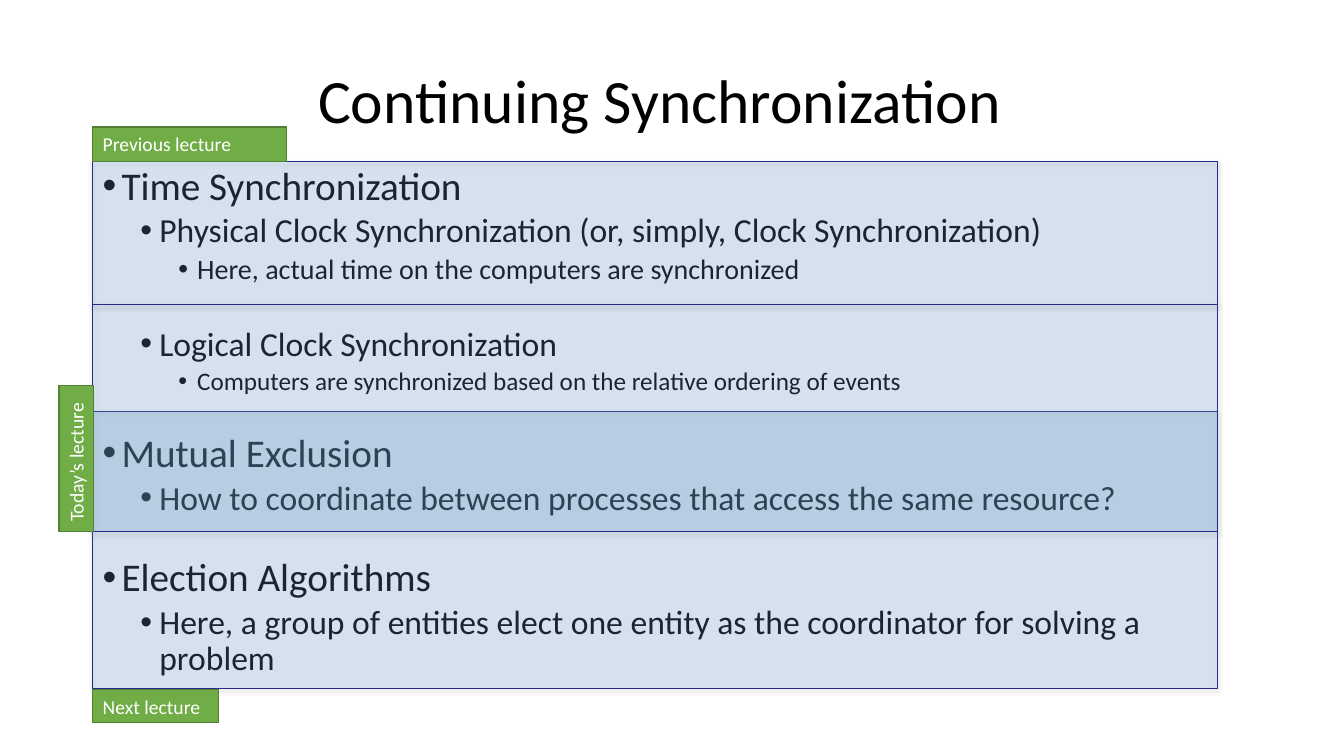
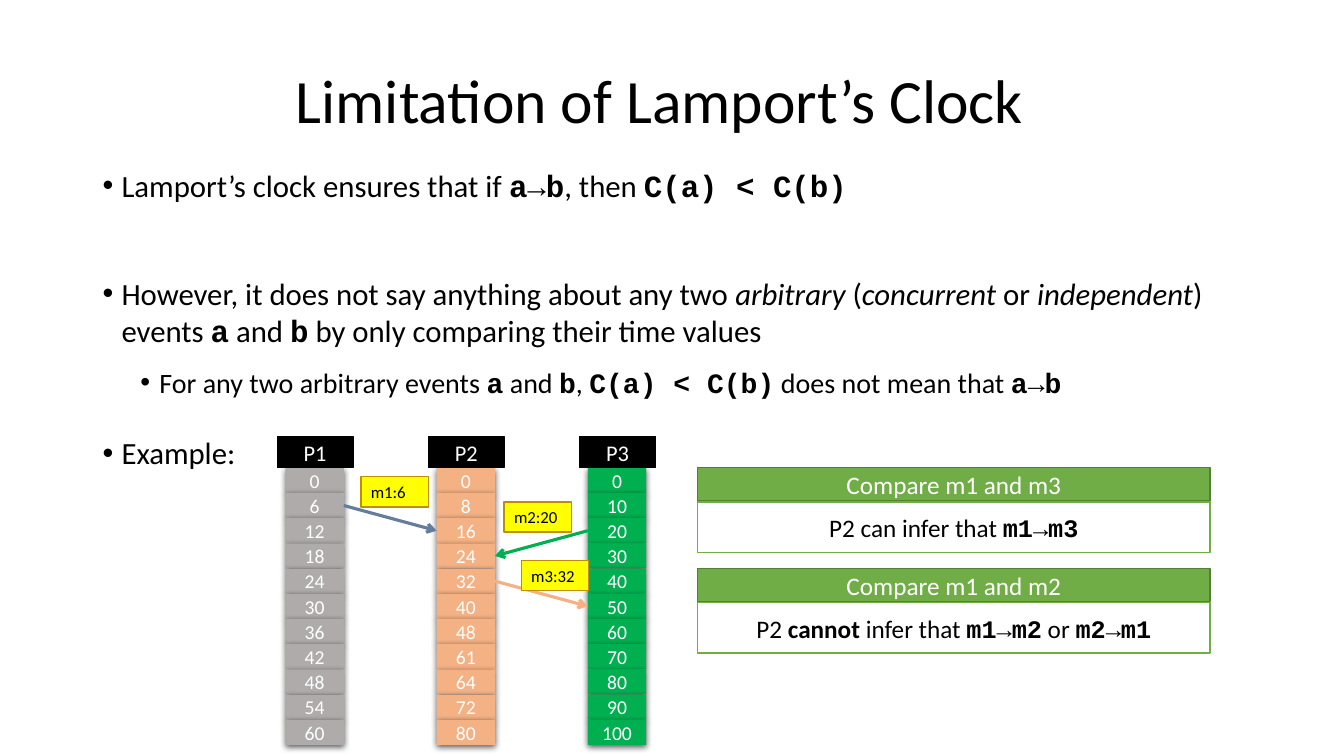
from dataclasses import dataclass

from lxml import etree
from pptx import Presentation
from pptx.dml.color import RGBColor
from pptx.enum.shapes import MSO_CONNECTOR, MSO_SHAPE
from pptx.enum.text import MSO_ANCHOR, MSO_AUTO_SIZE, PP_ALIGN
from pptx.oxml.ns import qn
from pptx.util import Inches, Pt

RECT = MSO_SHAPE.RECTANGLE
STRAIGHT = MSO_CONNECTOR.STRAIGHT
TOP, MIDDLE = MSO_ANCHOR.TOP, MSO_ANCHOR.MIDDLE
LEFT, CENTER = PP_ALIGN.LEFT, PP_ALIGN.CENTER
NO_AUTOFIT = MSO_AUTO_SIZE.NONE
TITLE_ONLY = 5


@dataclass(frozen=True)
class Theme:
    # Colours
    black: str = "000000"
    white: str = "FFFFFF"
    green: str = "70AD47"
    green_edge: str = "538035"
    band: str = "5B9BD5"
    band_edge: str = "292989"
    band_shadow: str = "808080"
    yellow: str = "FFFF00"
    yellow_edge: str = "BD8E00"
    gray: str = "AFABAB"
    orange: str = "F4B183"
    bright_green: str = "00B050"
    slate: str = "657D9D"
    # Fonts and type sizes
    font: str = "Calibri"
    code_font: str = "Courier New"
    title: int = 44
    topic: int = 28
    subtopic: int = 24
    detail: int = 20
    fine_detail: int = 18
    statement: int = 22
    card: int = 18
    process: int = 16
    label: int = 14
    message: int = 12


T = Theme()


# Text
def code(text):
    return text, {"font": T.code_font, "bold": True}


def bold(text):
    return text, {"bold": True}


def italic(text):
    return text, {"italic": True}


def add_run(paragraph, text, size, color, font=T.font, bold=False, italic=False):
    run = paragraph.add_run()
    run.text = text
    run.font.name, run.font.size = font, Pt(size)
    run.font.bold, run.font.italic = bold, italic
    run.font.color.rgb = RGBColor.from_string(color)


def write(paragraph, content, size, color=T.black, align=LEFT, level=0,
          bullet=False, line=1.0, before=0, after=0):
    """Fill a paragraph with a string, or a list of strings and styled parts."""
    paragraph.alignment, paragraph.level = align, level
    paragraph.line_spacing = line
    paragraph.space_before, paragraph.space_after = Pt(before), Pt(after)
    if bullet:
        step = Pt(13.5)
        properties = paragraph._p.get_or_add_pPr()
        properties.set("marL", str(step * (1 + 2 * level)))
        properties.set("indent", str(-step))
        etree.SubElement(properties, qn("a:buFont"), typeface="Arial")
        etree.SubElement(properties, qn("a:buChar"), char="•")
    for part in [content] if isinstance(content, str) else content:
        text, style = (part, {}) if isinstance(part, str) else part
        add_run(paragraph, text, size, color, **style)


def add_title_slide(prs, title):
    slide = prs.slides.add_slide(prs.slide_layouts[TITLE_ONLY])
    heading = slide.shapes.title
    heading.left, heading.top = Inches(1.92), Inches(0.3)
    heading.width, heading.height = Inches(9.25), Inches(1.45)
    frame = heading.text_frame
    frame.auto_size, frame.vertical_anchor = NO_AUTOFIT, MIDDLE
    write(frame.paragraphs[0], title, T.title, align=CENTER, line=0.9)
    return slide


def add_bullets(slide, width, height, items, line, after=0):
    """Each item is (level, size, space before, content)."""
    box = slide.shapes.add_textbox(Inches(0.92), Inches(1.6),
                                   Inches(width), Inches(height))
    frame = box.text_frame
    frame.word_wrap = True
    for index, (level, size, before, content) in enumerate(items):
        paragraph = frame.add_paragraph() if index else frame.paragraphs[0]
        write(paragraph, content, size, level=level, bullet=True,
              line=line, before=before, after=after)


# Shapes
def add_box(slide, left, top, width, height, fill, edge=None, edge_width=1,
            alpha=None, shadow=None):
    """A shadow is (colour, opacity percent, blur points, distance points)."""
    box = slide.shapes.add_shape(RECT, Inches(left), Inches(top),
                                 Inches(width), Inches(height))
    box.shadow.inherit = False
    box.fill.solid()
    box.fill.fore_color.rgb = RGBColor.from_string(fill)
    if edge:
        box.line.color.rgb = RGBColor.from_string(edge)
        box.line.width = Pt(edge_width)
    else:
        box.line.fill.background()
    properties = box.element.spPr
    if alpha:
        color = properties.find(qn("a:solidFill"))[0]
        etree.SubElement(color, qn("a:alpha"), val=str(alpha * 1000))
    if shadow:
        shade, opacity, blur, distance = shadow
        outer = etree.SubElement(
            properties.find(qn("a:effectLst")), qn("a:outerShdw"),
            blurRad=str(Pt(blur)), dist=str(Pt(distance)),
            dir="5400000", algn="t", rotWithShape="0")
        color = etree.SubElement(outer, qn("a:srgbClr"), val=shade)
        etree.SubElement(color, qn("a:alpha"), val=str(opacity * 1000))
    return box


def add_text_box(slide, place, content, size, color=T.white, align=CENTER,
                 anchor=MIDDLE, **look):
    box = add_box(slide, *place, **look)
    box.text_frame.word_wrap = True
    box.text_frame.vertical_anchor = anchor
    write(box.text_frame.paragraphs[0], content, size, color, align)
    return box


def add_band(slide, top, height):
    add_box(slide, 0.92, top, 11.16, height, T.band, T.band_edge, 0.75,
            alpha=20, shadow=(T.band_shadow, 38, 3.1, 1.6))


def add_lecture_tag(slide, place, text):
    return add_text_box(slide, place, text, T.label, align=LEFT, anchor=TOP,
                        fill=T.green, edge=T.green_edge)


def add_arrow(slide, start, end, color):
    arrow = slide.shapes.add_connector(STRAIGHT, *map(Inches, start + end))
    arrow.line.color.rgb = RGBColor.from_string(color)
    arrow.line.width = Pt(2.25)
    properties = arrow.element.spPr
    etree.SubElement(properties.find(qn("a:ln")), qn("a:tailEnd"), type="arrow")
    etree.SubElement(properties, qn("a:effectLst"))


# Clock diagram
CELL_W, CELL_H = 0.58, 0.25
CLOCK_TOP, CLOCK_LEFT, CLOCK_PITCH = 4.64, 2.83, 1.5


def clock_left(column):
    return CLOCK_LEFT + column * CLOCK_PITCH


def tick_middle(row):
    return CLOCK_TOP + (row + 0.5) * CELL_H


def add_clock(slide, column, name, ticks, color):
    left = clock_left(column)
    for row, tick in enumerate(ticks):
        place = (left, CLOCK_TOP + row * CELL_H, CELL_W, CELL_H)
        add_text_box(slide, place, str(tick), T.label, fill=color,
                     shadow=(T.black, 63, 4.5, 1.5))
    add_text_box(slide, (left - 0.08, 4.33, 0.75, 0.31), name, T.process,
                 fill=T.black, edge=T.black)


def add_message(slide, sender, receiver, row, color):
    """Join the facing edges of two clocks, one tick down."""
    forward = sender < receiver
    start = clock_left(sender) + (CELL_W if forward else 0)
    end = clock_left(receiver) + (0 if forward else CELL_W)
    add_arrow(slide, (start, tick_middle(row)), (end, tick_middle(row + 1)), color)


def add_comparison(slide, top, heading, finding):
    add_text_box(slide, (6.92, top, 5.08, 0.33), heading, T.card,
                 fill=T.green, edge=T.green_edge)
    add_text_box(slide, (6.92, top + 0.34, 5.08, 0.5), finding, T.card, T.black,
                 fill=T.white, edge=T.green)


# Slides
def build_outline(prs):
    slide = add_title_slide(prs, "Continuing Synchronization")
    add_bullets(slide, 11.16, 5.75, [
        (0, T.topic, 0, "Time Synchronization"),
        (1, T.subtopic, 3.8,
         "Physical Clock Synchronization (or, simply, Clock Synchronization)"),
        (2, T.detail, 3.8, "Here, actual time on the computers are synchronized"),
        (1, T.subtopic, 29.6, "Logical Clock Synchronization"),
        (2, T.fine_detail, 3.8,
         "Computers are synchronized based on the relative ordering of events"),
        (0, T.topic, 26.7, "Mutual Exclusion"),
        (1, T.subtopic, 3.8,
         "How to coordinate between processes that access the same resource?"),
        (0, T.topic, 28.9, "Election Algorithms"),
        (1, T.subtopic, 3.8, "Here, a group of entities elect one entity as the "
                             "coordinator for solving a problem"),
    ], line=0.9)

    # Lecture bands; today's and next lecture overlap on mutual exclusion
    for top, height in ((1.6, 1.42), (4.08, 2.75), (3.02, 2.25)):
        add_band(slide, top, height)
    add_lecture_tag(slide, (0.92, 1.26, 1.92, 0.34), "Previous lecture")
    add_lecture_tag(slide, (0.92, 6.84, 1.25, 0.33), "Next lecture")
    today = add_lecture_tag(slide, (0.03, 4.38, 1.45, 0.34), "Today’s lecture")
    today.rotation = 270


def build_limitation(prs):
    slide = add_title_slide(prs, "Limitation of Lamport’s Clock")
    add_bullets(slide, 11.33, 4.95, [
        (0, T.statement, 0, ["Lamport’s clock ensures that if ", code("a→b"),
                             ", then ", code("C(a) < C(b)")]),
        (0, T.statement, 44.9, [
            "However, it does not say anything about any two ",
            italic("arbitrary"), " (", italic("concurrent"), " or ",
            italic("independent"), ") events ", code("a"), " and ", code("b"),
            " by only comparing their time values"]),
        (1, T.detail, 6, [
            "For any two arbitrary events ", code("a"), " and ", code("b"), ", ",
            code("C(a) < C(b)"), " does not mean that ", code("a→b")]),
        (0, T.statement, 19.2, "Example:"),
    ], line=1.0, after=6)

    # Process clocks
    add_clock(slide, 0, "P1", range(0, 61, 6), T.gray)
    add_clock(slide, 1, "P2", [*range(0, 49, 8), 61, 64, 72, 80], T.orange)
    add_clock(slide, 2, "P3", range(0, 101, 10), T.bright_green)

    # Messages and their timestamps
    add_message(slide, 0, 1, 1, T.slate)
    add_message(slide, 2, 1, 2, T.bright_green)
    add_message(slide, 1, 2, 4, T.orange)
    for left, top, stamp in ((3.58, 4.73, "m1:6"), (5, 4.98, "m2:20"),
                             (5.17, 5.56, "m3:32")):
        add_text_box(slide, (left, top, 0.67, 0.3), stamp, T.message, T.black,
                     align=LEFT, anchor=TOP, fill=T.yellow, edge=T.yellow_edge)

    # Comparisons
    add_comparison(slide, 4.64, "Compare m1 and m3",
                   ["P2 can infer that ", code("m1→m3")])
    add_comparison(slide, 5.64, "Compare m1 and m2",
                   ["P2 ", bold("cannot"), " infer that ", code("m1→m2"),
                    " or ", code("m2→m1")])


def main():
    prs = Presentation()
    prs.slide_width, prs.slide_height = Inches(13.33), Inches(7.5)
    build_outline(prs)
    build_limitation(prs)
    prs.save("out.pptx")


if __name__ == "__main__":
    main()
